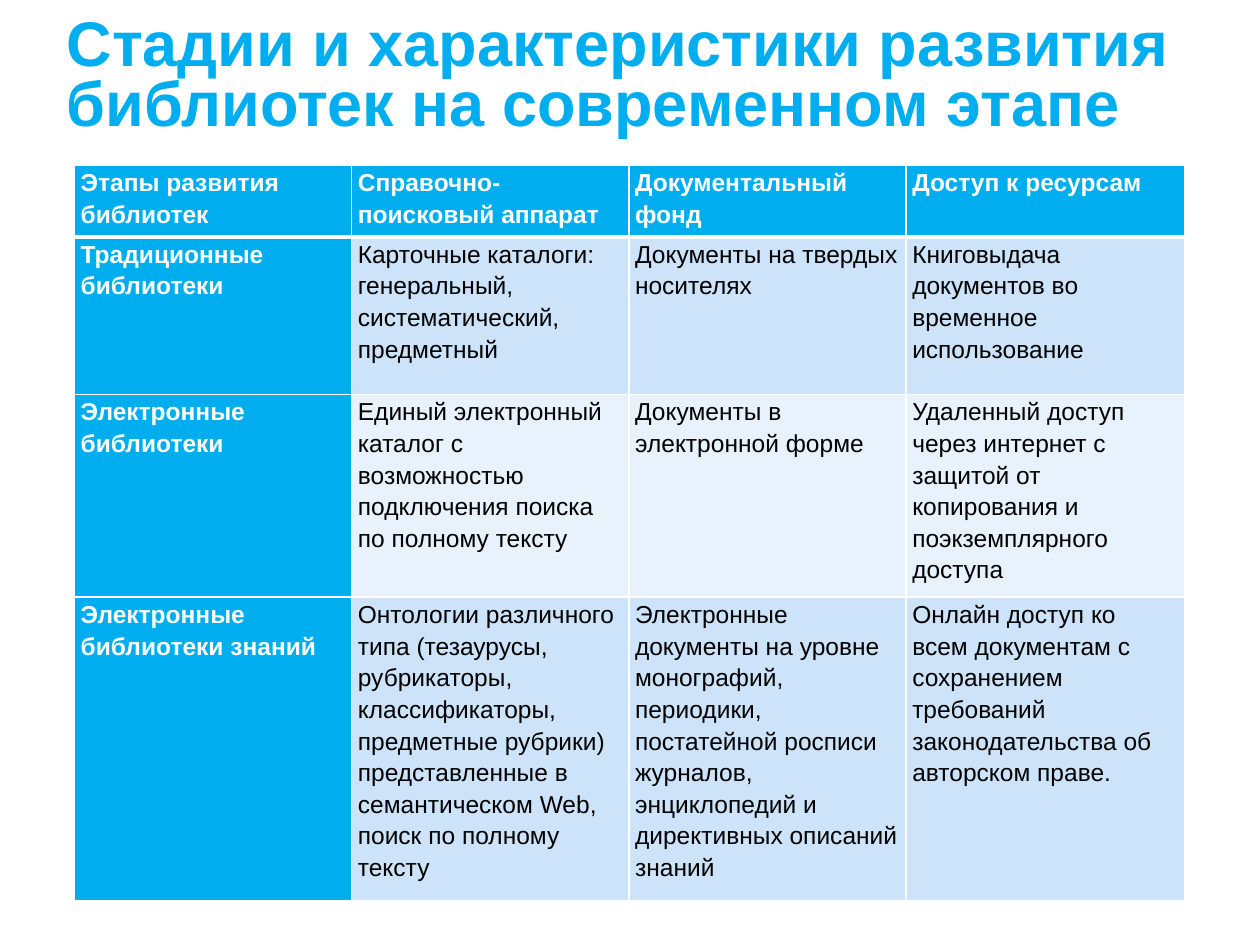
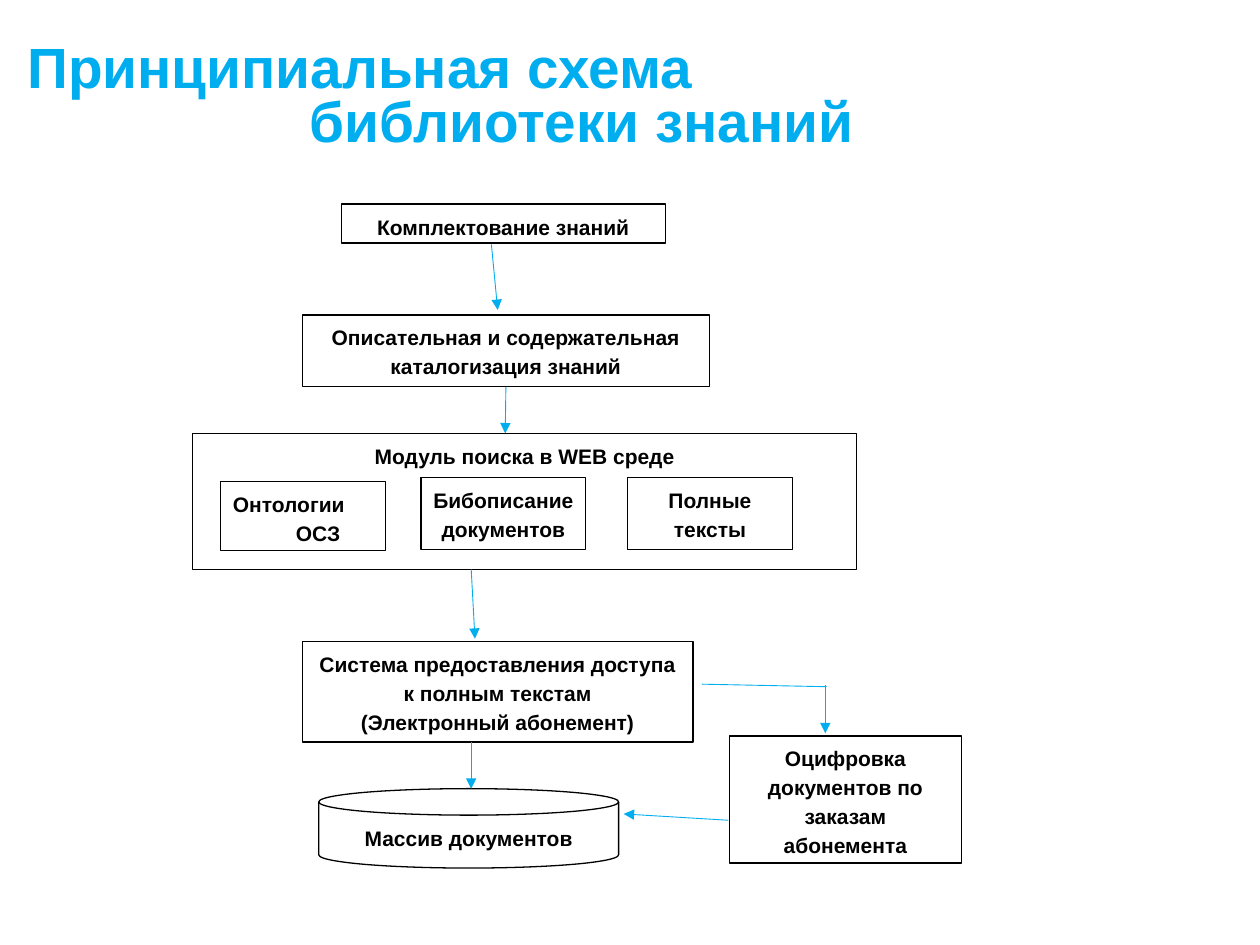
from typing import NamedTuple, Optional

from lxml.etree import SubElement
from pptx import Presentation
from pptx.dml.color import RGBColor
from pptx.enum.shapes import MSO_CONNECTOR as Link, MSO_SHAPE as Kind
from pptx.enum.text import MSO_ANCHOR as Anchor, PP_ALIGN as Align
from pptx.oxml.ns import qn
from pptx.util import Inches, Pt

FONT = "Arial"
BLUE, WHITE, BLACK = "00AEEF", "FFFFFF", "000000"
BANDS = ("CCE3F9", "E7F2FC")
COLS = (2.2, 2.2, 2.2, 2.21)
ROWS = (0.57, 1.25, 1.51, 2.25)
CELLS = (
    ("Этапы развития библиотек", "Справочно-поисковый аппарат",
     "Документальный фонд", "Доступ к ресурсам"),
    ("Традиционные библиотеки",
     "Карточные каталоги: генеральный, систематический, предметный",
     "Документы на твердых носителях",
     "Книговыдача документов во временное использование"),
    ("Электронные библиотеки",
     "Единый электронный каталог с возможностью подключения поиска "
     "по полному тексту",
     "Документы в электронной форме",
     "Удаленный доступ через интернет с защитой от копирования и "
     "поэкземплярного доступа"),
    ("Электронные библиотеки знаний",
     "Онтологии различного типа (тезаурусы, рубрикаторы,\n"
     "классификаторы, предметные рубрики) представленные в "
     "семантическом Web, поиск по полному тексту",
     "Электронные документы на уровне монографий, периодики, постатейной "
     "росписи журналов, энциклопедий и директивных описаний знаний",
     "Онлайн доступ ко всем документам с сохранением требований "
     "законодательства об авторском праве."),
)


class Box(NamedTuple):
    """A labelled block of the scheme; hang indents its later lines."""
    text: str
    left: float
    top: float
    width: float
    height: float
    hang: float = 0
    kind: Kind = Kind.RECTANGLE


class Arrow(NamedTuple):
    """A line between two points, starting below a box if one is named."""
    start: tuple[float, float]
    end: tuple[float, float]
    head: bool = True
    source: Optional[str] = None


BOXES = {
    "intake": Box("Комплектование знаний", 2.71, 1.62, 2.57, 0.31),
    "catalog": Box("Описательная и содержательная каталогизация знаний",
                   2.4, 2.5, 3.23, 0.57),
    "search": Box("Модуль поиска в WEB среде", 1.53, 3.44, 5.27, 1.08),
    "ontology": Box("Онтологии\vОСЗ", 1.75, 3.82, 1.31, 0.55, hang=0.5),
    "records": Box("Бибописание документов", 3.34, 3.79, 1.31, 0.57),
    "texts": Box("Полные тексты", 4.98, 3.79, 1.31, 0.57),
    "access": Box("Система предоставления доступа к полным текстам\v"
                  "(Электронный абонемент)", 2.4, 5.09, 3.1, 0.8),
    "scans": Box("Оцифровка документов по заказам абонемента",
                 5.79, 5.84, 1.84, 1.01),
    "store": Box("Массив документов", 2.53, 6.26, 2.38, 0.63,
                 kind=Kind.FLOWCHART_MAGNETIC_DISK),
}
ARROWS = (
    Arrow((3.9, 1.94), (3.95, 2.46)),
    Arrow((4.02, 3.07), (4.01, 3.44), source="catalog"),
    Arrow((3.74, 4.52), (3.77, 5.07)),
    Arrow((3.74, 5.89), (3.74, 6.26)),
    Arrow((5.57, 5.43), (6.56, 5.45), head=False),
    Arrow((6.55, 5.44), (6.55, 5.82)),
    Arrow((5.78, 6.51), (4.95, 6.46)),
)


def color(code: str) -> RGBColor:
    """Turn a hex string into a colour."""
    return RGBColor.from_string(code)


def write(frame, text: str, size: float, code: str, bold: bool = True,
          pitch: float = 1.15, align=Align.LEFT, after: float = 0,
          hang: float = 0) -> None:
    """Fill a text frame and style all of its paragraphs."""
    frame.word_wrap = True
    frame.text = text
    for para in frame.paragraphs:
        para.alignment = align
        para.line_spacing = pitch
        para.space_after = Pt(after)
        if hang:
            props = para._p.get_or_add_pPr()
            props.set("marL", str(Inches(hang)))
            props.set("indent", str(-Inches(hang)))
        for run in para.runs:
            font = run.font
            font.name, font.size, font.bold = FONT, Pt(size), bold
            font.color.rgb = color(code)


def add_title(slide, text: str, left: float, width: float, height: float,
              size: float, hang: float = 0) -> None:
    """Add a slide title that sits on the bottom of its box."""
    box = slide.shapes.add_textbox(Inches(left), 0, Inches(width), Inches(height))
    box.text_frame.vertical_anchor = Anchor.BOTTOM
    write(box.text_frame, text, size, BLUE, pitch=0.8, hang=hang)


def add_edges(cell, top: float, bottom: float) -> None:
    """Draw white borders round a cell."""
    props = cell._tc.get_or_add_tcPr()
    for side, width in (("L", 1), ("R", 1), ("T", top), ("B", bottom)):
        line = SubElement(props, qn(f"a:ln{side}"), w=str(Pt(width)))
        fill = SubElement(line, qn("a:solidFill"))
        SubElement(fill, qn("a:srgbClr"), val=WHITE)


def add_grid(slide) -> None:
    """Add the table of library stages."""
    table = slide.shapes.add_table(
        len(ROWS), len(COLS), Inches(0.59), Inches(1.31),
        Inches(sum(COLS)), Inches(sum(ROWS))).table
    for col, width in zip(table.columns, COLS):
        col.width = Inches(width)
    for row, height in zip(table.rows, ROWS):
        row.height = Inches(height)
    for y, texts in enumerate(CELLS):
        for x, text in enumerate(texts):
            cell = table.cell(y, x)
            head = y == 0 or x == 0
            cell.margin_left = cell.margin_right = Inches(0.05)
            cell.margin_top = cell.margin_bottom = 0
            add_edges(cell, 3 if y == 1 else 1, 3 if y == 0 else 1)
            cell.fill.solid()
            cell.fill.fore_color.rgb = color(BLUE if head else BANDS[(y - 1) % 2])
            write(cell.text_frame, text, 14, WHITE if head else BLACK, head)


def add_box(slide, box: Box):
    """Draw one block of the scheme."""
    shape = slide.shapes.add_shape(
        box.kind, Inches(box.left), Inches(box.top),
        Inches(box.width), Inches(box.height))
    shape.shadow.inherit = False
    shape.fill.solid()
    shape.fill.fore_color.rgb = color(WHITE)
    shape.line.color.rgb = color(BLACK)
    shape.line.width = Pt(0.75)
    shape.text_frame.vertical_anchor = Anchor.TOP
    write(shape.text_frame, box.text, 12, BLACK, after=10, hang=box.hang,
          align=Align.LEFT if box.hang else Align.CENTER)
    return shape


def add_arrow(slide, arrow: Arrow, shapes: dict) -> None:
    """Draw one line of the scheme."""
    ends = [Inches(n) for n in arrow.start + arrow.end]
    link = slide.shapes.add_connector(Link.STRAIGHT, *ends)
    if arrow.source:
        link.begin_connect(shapes[arrow.source], 2)
    link.line.color.rgb = color(BLUE)
    link.line.width = Pt(0.5)
    if arrow.head:
        SubElement(link.line._get_or_add_ln(), qn("a:tailEnd"), type="triangle")
    SubElement(link._element.spPr, qn("a:effectLst"))


def main() -> None:
    """Build and save the two slides."""
    deck = Presentation()
    deck.slide_width, deck.slide_height = Inches(10), Inches(7.5)
    blank = deck.slide_layouts[6]

    stages = deck.slides.add_slide(blank)
    add_title(stages, "Стадии и характеристики развития библиотек "
              "на современном этапе", 0.43, 9.29, 1.15, 36)
    add_grid(stages)

    scheme = deck.slides.add_slide(blank)
    add_title(scheme, "Принципиальная схема\vбиблиотеки знаний",
              0.12, 9.69, 1.27, 32.4, hang=2.24)
    shapes = {name: add_box(scheme, box) for name, box in BOXES.items()}
    for arrow in ARROWS:
        add_arrow(scheme, arrow, shapes)

    deck.save("out.pptx")


if __name__ == "__main__":
    main()
